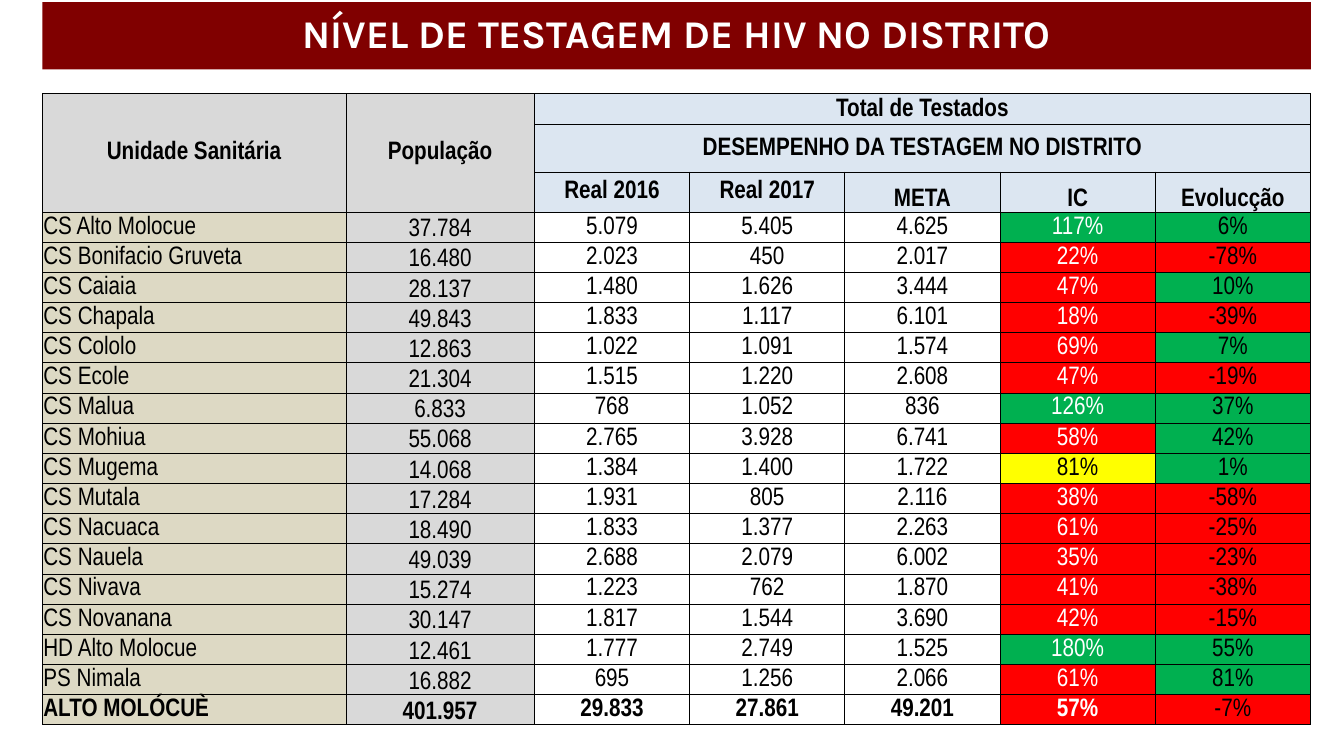
"""Build the slide on HIV testing levels by health unit."""
from dataclasses import dataclass

from lxml.etree import SubElement
from pptx import Presentation
from pptx.dml.color import RGBColor
from pptx.enum.text import MSO_ANCHOR, MSO_AUTO_SIZE, PP_ALIGN
from pptx.oxml.ns import qn
from pptx.util import Inches, Length, Pt

WIDE, HIGH = Inches(13.33), Inches(7.5)
LEFT, SPAN = 3.15, 94.38
COLS = [22.58, 14.03] + [11.55] * 5
ROWS = [4.1, 6.25, 5.3] + [3.99] * 17
HUES = {
    "title": "800000", "grey": "D9D9D9", "blue": "DCE6F1", "sand": "DDD9C4",
    "white": "FFFFFF", "black": "000000",
    "green": "00B050", "gold": "FFFF00", "red": "FF0000",
}


@dataclass(frozen=True)
class Unit:
    name: str
    people: str
    past: str
    real: str
    goal: str
    rate: int
    trend: int
    total: bool = False


@dataclass(frozen=True)
class Head:
    row: int
    col: int
    text: str
    hue: str = "blue"
    down: int = 1
    over: int = 1
    low: bool = False


@dataclass(frozen=True)
class Style:
    fill: str = "white"
    ink: str = "black"
    bold: bool = False
    low: bool = False
    align: PP_ALIGN = PP_ALIGN.CENTER


HEADS = [
    Head(0, 0, "Unidade Sanitária", "grey", down=3),
    Head(0, 1, "População", "grey", down=3),
    Head(0, 2, "Total de Testados", over=5),
    Head(1, 2, "DESEMPENHO DA TESTAGEM NO DISTRITO", over=5),
    Head(2, 2, "Real 2016"),
    Head(2, 3, "Real 2017"),
    Head(2, 4, "META", low=True),
    Head(2, 5, "IC", low=True),
    Head(2, 6, "Evolucção", low=True),
]
UNITS = [
    Unit("CS Alto Molocue", "37.784", "5.079", "5.405", "4.625", 117, 6),
    Unit("CS Bonifacio Gruveta", "16.480", "2.023", "450", "2.017", 22, -78),
    Unit("CS Caiaia", "28.137", "1.480", "1.626", "3.444", 47, 10),
    Unit("CS Chapala", "49.843", "1.833", "1.117", "6.101", 18, -39),
    Unit("CS Cololo", "12.863", "1.022", "1.091", "1.574", 69, 7),
    Unit("CS Ecole", "21.304", "1.515", "1.220", "2.608", 47, -19),
    Unit("CS Malua", "6.833", "768", "1.052", "836", 126, 37),
    Unit("CS Mohiua", "55.068", "2.765", "3.928", "6.741", 58, 42),
    Unit("CS Mugema", "14.068", "1.384", "1.400", "1.722", 81, 1),
    Unit("CS Mutala", "17.284", "1.931", "805", "2.116", 38, -58),
    Unit("CS Nacuaca", "18.490", "1.833", "1.377", "2.263", 61, -25),
    Unit("CS Nauela", "49.039", "2.688", "2.079", "6.002", 35, -23),
    Unit("CS Nivava", "15.274", "1.223", "762", "1.870", 41, -38),
    Unit("CS Novanana", "30.147", "1.817", "1.544", "3.690", 42, -15),
    Unit("HD Alto Molocue", "12.461", "1.777", "2.749", "1.525", 180, 55),
    Unit("PS Nimala", "16.882", "695", "1.256", "2.066", 61, 81),
    Unit("ALTO MOLÓCUÈ", "401.957", "29.833", "27.861", "49.201", 57, -7, True),
]


def across(share: float) -> Length:
    return Length(round(WIDE * share / 100))


def down(share: float) -> Length:
    return Length(round(HIGH * share / 100))


def color(name: str) -> RGBColor:
    return RGBColor.from_string(HUES[name])


def write(par, text: str, face: str, size: int, ink: str, bold: bool) -> None:
    run = par.add_run()
    run.text = text
    run.font.name, run.font.size, run.font.bold = face, Pt(size), bold
    run.font.color.rgb = color(ink)


def frame(cell) -> None:
    props = cell._tc.get_or_add_tcPr()
    for spot, side in enumerate(("lnL", "lnR", "lnT", "lnB")):
        line = SubElement(props, qn(f"a:{side}"), w=str(Pt(0.5)))
        fill = SubElement(line, qn("a:solidFill"))
        SubElement(fill, qn("a:srgbClr"), val=HUES["black"])
        props.insert(spot, line)


def fill_cell(cell, text: str, style: Style) -> None:
    cell.fill.solid()
    cell.fill.fore_color.rgb = color(style.fill)
    cell.vertical_anchor = MSO_ANCHOR.BOTTOM if style.low else MSO_ANCHOR.MIDDLE
    par = cell.text_frame.paragraphs[0]
    par.alignment = style.align
    write(par, text, "Arial Narrow", 18, style.ink, style.bold)


def rate_style(unit: Unit) -> Style:
    if unit.rate >= 100:
        return Style("green", "white", unit.total)
    if unit.rate >= 80:
        return Style("gold", "black", unit.total)
    return Style("red", "white", unit.total)


def draw_unit(table, row: int, unit: Unit) -> None:
    bold = unit.total
    plain = Style(bold=bold)
    parts = [
        (unit.name, Style("sand", bold=bold, align=PP_ALIGN.LEFT)),
        (unit.people, Style("grey", bold=bold, low=True)),
        (unit.past, plain),
        (unit.real, plain),
        (unit.goal, plain),
        (f"{unit.rate}%", rate_style(unit)),
        (f"{unit.trend}%", Style("green" if unit.trend > 0 else "red")),
    ]
    for col, (text, style) in enumerate(parts):
        fill_cell(table.cell(row, col), text, style)


def draw_head(table, head: Head) -> None:
    cell = table.cell(head.row, head.col)
    if head.down * head.over > 1:
        cell.merge(table.cell(head.row + head.down - 1, head.col + head.over - 1))
    fill_cell(cell, head.text, Style(head.hue, bold=True, low=head.low))


def draw_title(shape) -> None:
    shape.left, shape.top = across(LEFT), down(0.27)
    shape.width, shape.height = across(SPAN), down(8.93)
    shape.fill.solid()
    shape.fill.fore_color.rgb = color("title")
    text = shape.text_frame
    text.auto_size = MSO_AUTO_SIZE.NONE
    text.vertical_anchor = MSO_ANCHOR.MIDDLE
    par = text.paragraphs[0]
    par.alignment, par.line_spacing = PP_ALIGN.CENTER, 0.9
    write(par, "NÍVEL DE TESTAGEM DE HIV NO DISTRITO", "Karla", 28, "white", True)


def draw_table(slide) -> None:
    table = slide.shapes.add_table(
        len(ROWS), len(COLS), across(LEFT), down(12.4), across(sum(COLS)), down(sum(ROWS))
    ).table
    table.first_row = table.horz_banding = False
    for col, share in zip(table.columns, COLS):
        col.width = across(share)
    for row, share in zip(table.rows, ROWS):
        row.height = down(share)
    for cell in table.iter_cells():
        cell.margin_left = cell.margin_right = cell.margin_top = Inches(0.01)
        cell.margin_bottom = 0
        frame(cell)
    for head in HEADS:
        draw_head(table, head)
    for row, unit in enumerate(UNITS, start=3):
        draw_unit(table, row, unit)


def main() -> None:
    deck = Presentation()
    deck.slide_width, deck.slide_height = WIDE, HIGH
    slide = deck.slides.add_slide(deck.slide_layouts[5])
    draw_title(slide.shapes.title)
    draw_table(slide)
    deck.save("out.pptx")


if __name__ == "__main__":
    main()
